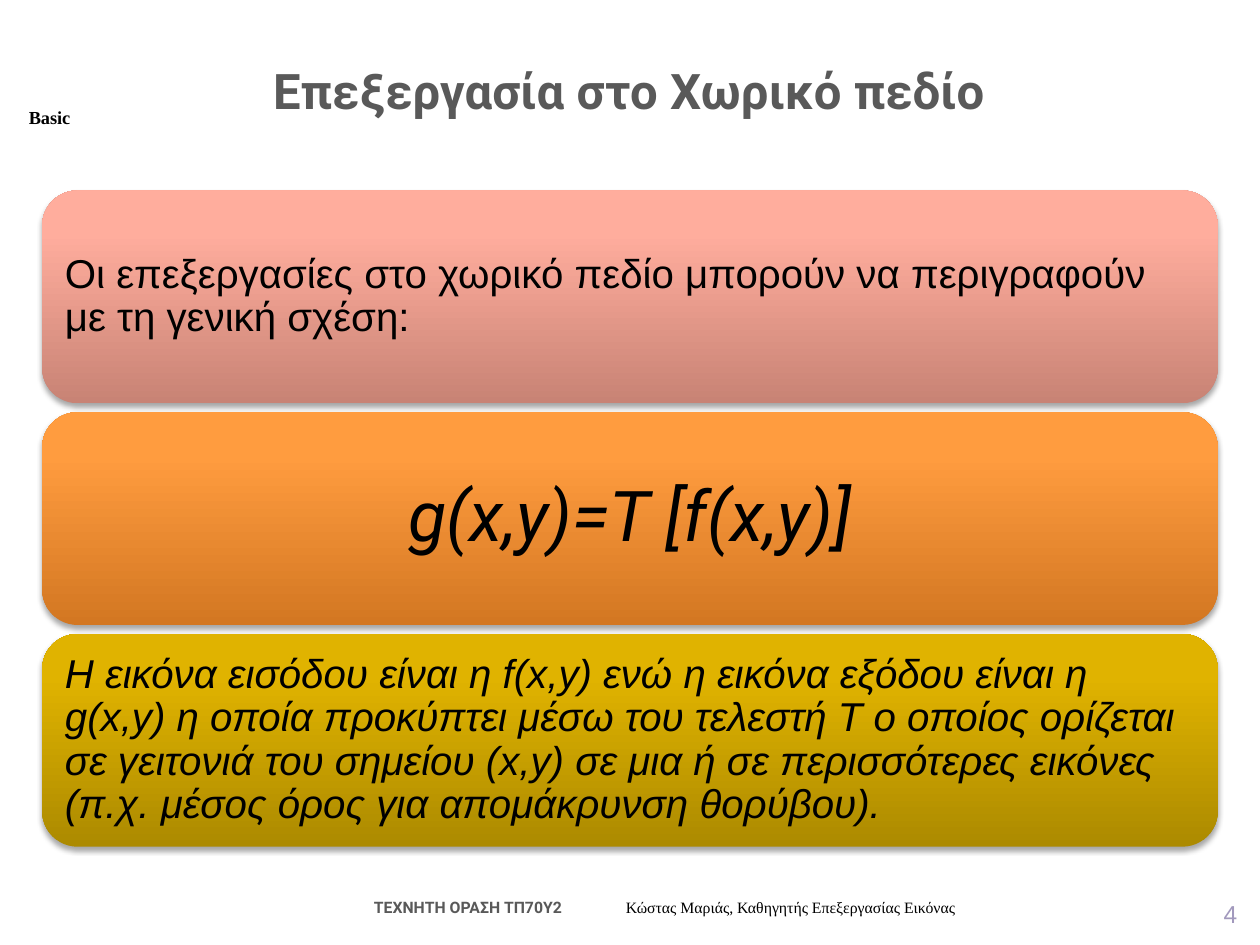
from lxml.etree import SubElement
from pptx import Presentation
from pptx.dml.color import RGBColor
from pptx.enum.shapes import MSO_SHAPE
from pptx.enum.text import MSO_ANCHOR, PP_ALIGN
from pptx.oxml import parse_xml
from pptx.oxml.ns import nsdecls, qn
from pptx.util import Cm, Pt

COLOURS = {"text": "000000", "heading": "595959", "number": "A299BD"}
# Gradient stops of each panel, from bottom to top
PANEL_COLOURS = {
    "salmon": ("C88375", "FFAD9D", "FFAF9F"),
    "orange": ("D37722", "FF9C3F", "FF9C40"),
    "gold": ("AC8A00", "E0B300", "E1B400"),
}
STOPS = (0, 80, 100)


def write(para, text, font="Arial", size=23, colour="text", bold=False, italic=False):
    """Add one formatted span to a paragraph."""
    span = para.add_run()
    span.text = text
    span.font.name = font
    span.font.size = Pt(size)
    span.font.bold = bold
    span.font.italic = italic
    span.font.color.rgb = RGBColor.from_string(COLOURS[colour])


class SlideBuilder:
    def __init__(self, deck):
        self.page = deck.slides.add_slide(deck.slide_layouts[6])

    def text_box(self, left, top, width, height, align=PP_ALIGN.LEFT,
                 anchor=MSO_ANCHOR.BOTTOM):
        box = self.page.shapes.add_textbox(Cm(left), Cm(top), Cm(width), Cm(height))
        box.text_frame.word_wrap = True
        box.text_frame.vertical_anchor = anchor
        para = box.text_frame.paragraphs[0]
        para.alignment = align
        return para

    def panel(self, top, stops, inset, align=PP_ALIGN.LEFT):
        panel = self.page.shapes.add_shape(
            MSO_SHAPE.ROUNDED_RECTANGLE, Cm(0.85), Cm(top), Cm(23.7), Cm(4.29))
        panel.line.fill.background()
        self.gradient(panel, stops)
        self.soft_shadow(panel)
        frame = panel.text_frame
        frame.word_wrap = True
        frame.vertical_anchor = MSO_ANCHOR.MIDDLE
        frame.margin_left = frame.margin_right = Cm(inset)
        frame.margin_top = frame.margin_bottom = Cm(inset)
        para = frame.paragraphs[0]
        para.alignment = align
        para.line_spacing = 0.9
        return para

    def gradient(self, shape, colours):
        stops = "".join(
            f'<a:gs pos="{stop * 1000}"><a:srgbClr val="{colour}"/></a:gs>'
            for stop, colour in zip(STOPS, colours))
        fill = parse_xml(
            f'<a:gradFill {nsdecls("a")} rotWithShape="1"><a:gsLst>{stops}</a:gsLst>'
            '<a:lin ang="16200000" scaled="0"/></a:gradFill>')
        shape._element.spPr.find(qn("a:prstGeom")).addnext(fill)

    def soft_shadow(self, shape):
        shape.shadow.inherit = False
        effects = shape._element.spPr.find(qn("a:effectLst"))
        shadow = SubElement(effects, qn("a:outerShdw"), blurRad=str(Pt(3.1)),
                            dist=str(Pt(1.8)), dir="5400000", rotWithShape="0")
        colour = SubElement(shadow, qn("a:srgbClr"), val="000000")
        SubElement(colour, qn("a:alpha"), val="35000")


def main():
    deck = Presentation()
    deck.slide_width, deck.slide_height = Cm(25.4), Cm(19.05)
    slide = SlideBuilder(deck)

    # Page number and footer
    write(slide.text_box(21.46, 18.06, 3.73, 0.79, PP_ALIGN.RIGHT), "4",
          size=14, colour="number")
    footer = slide.text_box(7.29, 17.98, 17.25, 0.64, anchor=MSO_ANCHOR.TOP)
    write(footer, "ΤΕΧΝΗΤΗ ΟΡΑΣΗ ΤΠ70Υ2\t\t", font="Roboto", size=9,
          colour="heading", bold=True)
    write(footer, "Κώστας Μαριάς, Καθηγητής Επεξεργασίας Εικόνας",
          font="Times New Roman", size=9)

    # Title
    write(slide.text_box(0.43, 0.64, 24.49, 1.9, PP_ALIGN.CENTER),
          "Επεξεργασία στο Χωρικό πεδίο", font="Roboto", size=28,
          colour="heading", bold=True)

    # Three stacked panels
    panels = [
        ("salmon", 0.25, PP_ALIGN.LEFT, {},
         "Οι επεξεργασίες στο χωρικό πεδίο μπορούν να περιγραφούν με τη γενική σχέση:"),
        ("orange", 0.43, PP_ALIGN.CENTER, {"font": "Roboto", "size": 40, "italic": True},
         "g(x,y)=T [f(x,y)]"),
        ("gold", 0.25, PP_ALIGN.LEFT, {"italic": True},
         "Η εικόνα εισόδου είναι η f(x,y) ενώ η εικόνα εξόδου είναι η g(x,y) η οποία "
         "προκύπτει μέσω του τελεστή Τ ο οποίος ορίζεται σε γειτονιά του σημείου (x,y) "
         "σε μια ή σε περισσότερες εικόνες (π.χ. μέσος όρος για απομάκρυνση θορύβου)."),
    ]
    for index, (name, inset, align, style, text) in enumerate(panels):
        para = slide.panel(3.84 + index * 4.47, PANEL_COLOURS[name], inset, align)
        write(para, text, **style)

    # Level label
    write(slide.text_box(0, 1.9, 2, 0.81, PP_ALIGN.CENTER), "Basic",
          font="Times New Roman", size=10.5, bold=True)

    deck.save("out.pptx")


if __name__ == "__main__":
    main()
